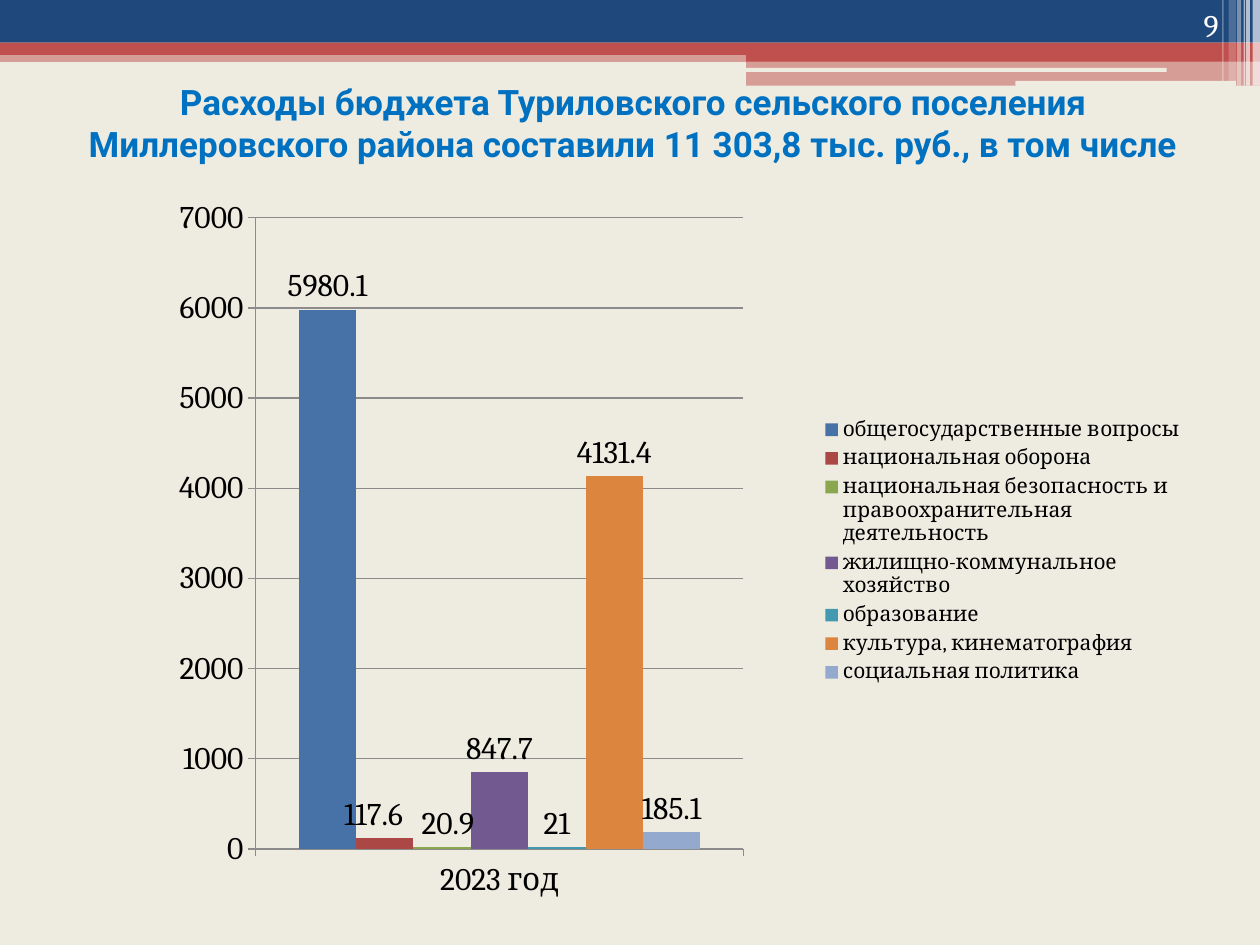
"""Build the slide on the 2023 spending of a rural settlement's budget."""
from lxml.etree import SubElement
from pptx import Presentation
from pptx.chart.data import CategoryChartData
from pptx.dml.color import RGBColor
from pptx.enum.chart import XL_CHART_TYPE, XL_LABEL_POSITION, XL_LEGEND_POSITION, XL_TICK_MARK
from pptx.enum.shapes import MSO_SHAPE
from pptx.enum.text import MSO_ANCHOR, PP_ALIGN
from pptx.oxml import parse_xml
from pptx.oxml.ns import nsdecls, qn
from pptx.util import Cm, Pt

CREAM = RGBColor(0xEE, 0xEC, 0xE1)
NAVY = RGBColor(0x1F, 0x49, 0x7D)
RED = RGBColor(0xC0, 0x50, 0x4D)
WHITE = RGBColor(0xFF, 0xFF, 0xFF)
BLACK = RGBColor(0, 0, 0)
TITLE_BLUE = RGBColor(0x00, 0x70, 0xC0)
GRID_GREY = RGBColor(0x8B, 0x8B, 0x8B)

BANDS = [
    (0, 1.02, 25.4, 0.23, RED, 50),
    (0, 0, 25.4, 0.86, NAVY, 100),
    (0, 0.86, 25.4, 0.25, RED, 100),
    (15.04, 0.99, 10.36, 0.25, RED, 100),
    (15.04, 1.22, 10.36, 0.51, RED, 50),
]
SLITS = [(15.01, 1.37, 8.51, 0.08), (20.47, 1.63, 4.45, 0.1)]
STRIPES = [
    (25.25, 0.15, 1.73, 65),
    (25.12, 0.08, 1.73, 65),
    (25.07, 0.03, 1.73, 60),
    (24.94, 0.08, 1.73, 40),
    (24.77, 0.15, 1.63, 20),
    (24.64, 0.03, 1.63, 30),
]
SPENDING = [
    ("общегосударственные вопросы", 5980.1, RGBColor(0x46, 0x72, 0xA8)),
    ("национальная оборона", 117.6, RGBColor(0xAB, 0x47, 0x44)),
    ("национальная безопасность и правоохранительная деятельность", 20.9,
     RGBColor(0x8A, 0xA6, 0x4F)),
    ("жилищно-коммунальное хозяйство", 847.7, RGBColor(0x72, 0x59, 0x90)),
    ("образование", 21, RGBColor(0x42, 0x99, 0xB0)),
    ("культура, кинематография", 4131.4, RGBColor(0xDC, 0x85, 0x3E)),
    ("социальная политика", 185.1, RGBColor(0x93, 0xA9, 0xCE)),
]
LABEL_SHIFTS = {1: -0.01, 2: 0.005}


def add_band(slide, left, top, width, height, color, opacity=100, kind=MSO_SHAPE.RECTANGLE):
    """Add a borderless block whose opacity is given in percent."""
    band = slide.shapes.add_shape(kind, Cm(left), Cm(top), Cm(width), Cm(height))
    band.shadow.inherit = False
    band.line.fill.background()
    band.fill.solid()
    band.fill.fore_color.rgb = color
    if opacity < 100:
        tint = band.fill._xPr.find(".//" + qn("a:srgbClr"))
        SubElement(tint, qn("a:alpha"), val=str(opacity * 1000))


def add_text(slide, text, left, top, width, height, *, font, size, color,
             bold=False, align=PP_ALIGN.LEFT, anchor=MSO_ANCHOR.MIDDLE, inset=(0.13, 0.13)):
    """Add a wrapped text box; inset holds its top and bottom margins."""
    box = slide.shapes.add_textbox(Cm(left), Cm(top), Cm(width), Cm(height))
    frame = box.text_frame
    frame.word_wrap = True
    frame.vertical_anchor = anchor
    frame.margin_top, frame.margin_bottom = map(Cm, inset)
    paragraph = frame.paragraphs[0]
    paragraph.alignment = align
    run = paragraph.add_run()
    run.text = text
    run.font.name = font
    run.font.size = Pt(size)
    run.font.bold = bold
    run.font.color.rgb = color


def manual_layout(**settings):
    """Return a chart layout element with the given settings."""
    items = "".join(f'<c:{name} val="{value}"/>' for name, value in settings.items())
    return parse_xml(f'<c:layout {nsdecls("c")}><c:manualLayout>{items}</c:manualLayout></c:layout>')


def style_axis(axis):
    """Give an axis a grey line and outward ticks."""
    axis.format.line.color.rgb = GRID_GREY
    axis.major_tick_mark = XL_TICK_MARK.OUTSIDE
    axis.minor_tick_mark = XL_TICK_MARK.NONE


def style_series(series, color, shift):
    """Colour a series, show its values and move the label sideways."""
    series.format.fill.solid()
    series.format.fill.fore_color.rgb = color
    series.invert_if_negative = False
    labels = series.data_labels
    labels.show_value = True
    labels.position = XL_LABEL_POSITION.OUTSIDE_END
    if shift:
        label = series.points[0].data_label
        label.position = XL_LABEL_POSITION.OUTSIDE_END
        element = labels._element.find(qn("c:dLbl"))
        element.find(qn("c:idx")).addnext(manual_layout(x=shift, y=0))


def add_spending_chart(slide):
    """Add the column chart with one series for each kind of spending."""
    data = CategoryChartData()
    data.categories = ["2023 год"]
    for name, amount, _ in SPENDING:
        data.add_series(name, [amount])
    chart = slide.shapes.add_chart(XL_CHART_TYPE.COLUMN_CLUSTERED, Cm(1.27), Cm(3.96),
                                   Cm(22.86), Cm(14.3), data).chart
    chart.has_title = False
    chart.font.name = "Cambria"
    chart.font.size = Pt(18)
    chart.font.color.rgb = BLACK

    plot = chart.plots[0]
    plot.gap_width = 150
    plot.overlap = 0
    plot.vary_by_categories = False
    for index, (series, (_, _, color)) in enumerate(zip(plot.series, SPENDING)):
        style_series(series, color, LABEL_SHIFTS.get(index))

    style_axis(chart.category_axis)
    amounts = chart.value_axis
    style_axis(amounts)
    amounts.minimum_scale, amounts.maximum_scale, amounts.major_unit = 0, 7000, 1000
    amounts.has_major_gridlines = True
    amounts.major_gridlines.format.line.color.rgb = GRID_GREY

    chart.has_legend = True
    chart.legend.position = XL_LEGEND_POSITION.RIGHT
    chart.legend.include_in_layout = False
    chart.legend.font.size = Pt(12)
    chart.legend.font.name = "Cambria"
    chart.legend.font.color.rgb = BLACK

    area = chart._chartSpace.chart.plotArea
    for old in area.findall(qn("c:layout")):
        area.remove(old)
    area.insert(0, manual_layout(layoutTarget="inner", xMode="edge", yMode="edge",
                                 x=0.17, y=0.03, w=0.43, h=0.89))


def main():
    """Build and save the slide."""
    deck = Presentation()
    deck.slide_width, deck.slide_height = Cm(25.4), Cm(19.05)
    slide = deck.slides.add_slide(deck.slide_layouts[6])
    slide.background.fill.solid()
    slide.background.fill.fore_color.rgb = CREAM

    for band in BANDS:
        add_band(slide, *band)
    for slit in SLITS:
        add_band(slide, *slit, CREAM, kind=MSO_SHAPE.ROUNDED_RECTANGLE)
    for left, width, height, opacity in STRIPES:
        add_band(slide, left, 0, width, height, WHITE, opacity)

    add_text(slide, "Расходы бюджета Туриловского сельского поселения Миллеровского района "
             "составили 11 303,8 тыс. руб., в том числе", 0.99, 1.78, 23.55, 2.29,
             font="Roboto", size=20, color=TITLE_BLUE, bold=True,
             align=PP_ALIGN.CENTER, inset=(0, 0.91))
    add_spending_chart(slide)
    add_text(slide, "9", 22.71, 0, 2.11, 1.02, font="Cambria", size=18, color=WHITE,
             align=PP_ALIGN.RIGHT, anchor=MSO_ANCHOR.BOTTOM)
    deck.save("out.pptx")


if __name__ == "__main__":
    main()
